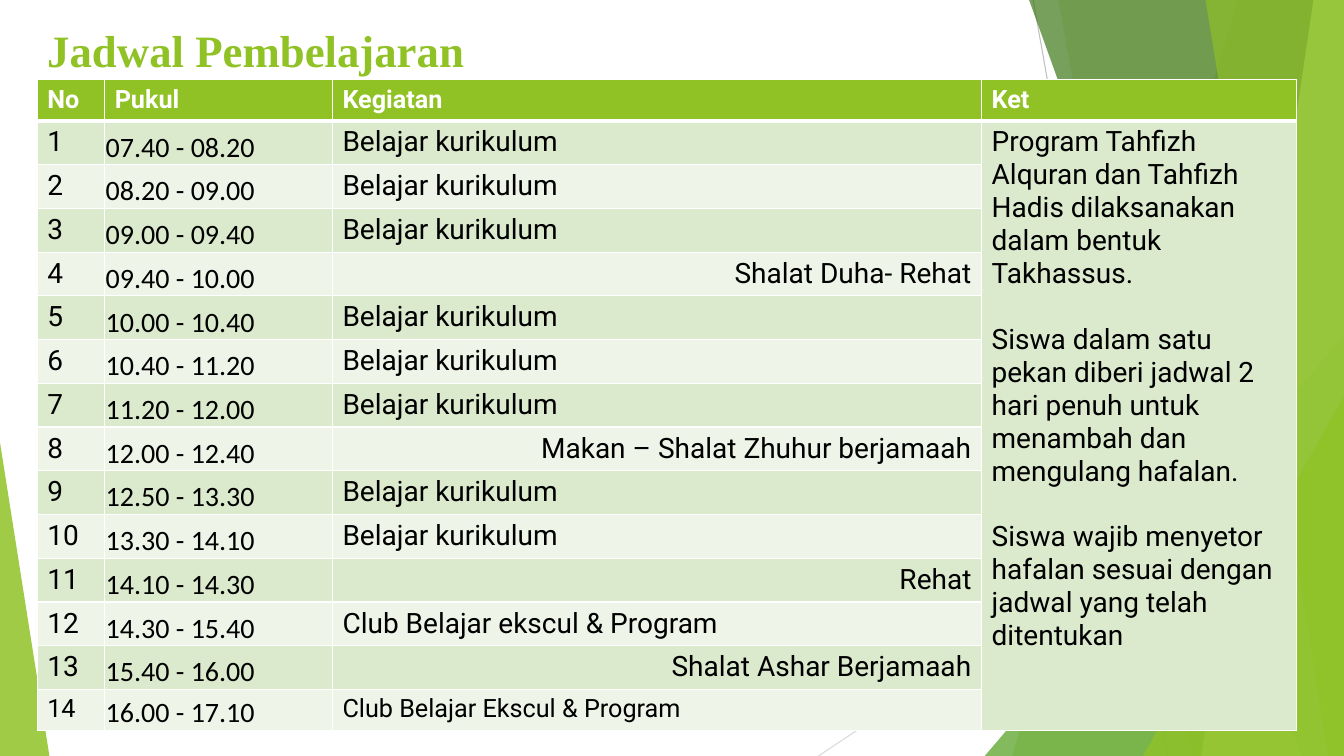
from lxml import etree
from pptx import Presentation, util as u
from pptx.dml.color import RGBColor
from pptx.enum import shapes, text
from pptx.oxml import ns

Pt = u.Pt
HEX = {"lime": "90C226", "green": "54A021", "dark": "3F7819", "pale": "C0E474",
       "gray": "BFBFBF", "mist": "D9D9D9", "odd": "DBE9CD", "even": "EEF4E8",
       "white": "FFFFFF", "black": "000000"}

# Content
TITLE = "Jadwal Pembelajaran"
HEAD = ["No", "Pukul", "Kegiatan", "Ket"]
STUDY = "Belajar kurikulum"
PLAN = [
    ("07.40 - 08.20", STUDY),
    ("08.20 - 09.00", STUDY),
    ("09.00 - 09.40", STUDY),
    ("09.40 - 10.00", "Shalat Duha- Rehat"),
    ("10.00 - 10.40", STUDY),
    ("10.40 - 11.20", STUDY),
    ("11.20 - 12.00", STUDY),
    ("12.00 - 12.40", "Makan – Shalat Zhuhur berjamaah"),
    ("12.50 - 13.30", STUDY),
    ("13.30 - 14.10", STUDY),
    ("14.10 - 14.30", "Rehat"),
    ("14.30 - 15.40", "Club Belajar ekscul & Program"),
    ("15.40 - 16.00", "Shalat Ashar Berjamaah"),
    ("16.00 - 17.10", "Club Belajar Ekscul & Program"),
]
BREAKS = {4, 8, 11, 13}
NOTES = [
    "Program Tahfizh Alquran dan Tahfizh Hadis dilaksanakan dalam bentuk Takhassus.",
    "Siswa dalam satu pekan diberi jadwal 2 hari penuh untuk menambah dan mengulang hafalan.",
    "Siswa wajib menyetor hafalan sesuai dengan jadwal yang telah ditentukan",
]

# Background: lines, then facets from back to front
WIDE, HIGH = 960, 540
LINES = [((738, 0), (834, HIGH), "gray"), ((WIDE, 290), (584.6, HIGH), "mist")]
# band: top x, bottom x, colour, opacity; peak: left, top, width, tip, colour, opacity
FACETS = [
    ("band", 884.2, 722.9, "lime", 30),
    ("band", 756, 851.8, "lime", 20),
    ("peak", 703.4, 239.8, 256.6, 1, "green", 72),
    ("band", 735.1, 929.5, "dark", 70),
    ("band", 938.2, 858.2, "pale", 70),
    ("band", 861.1, 949, "lime", 65),
    ("peak", 816.5, 283, 143.5, 1, "lime", 80),
    ("peak", 0, 316.1, 35.3, 0, "lime", 85),
]
COLS = [48.2, 162.7, 463.7, 224.9]
ROWS = [29.5] + [30.7] * 13 + [29.2]


def rgb(name):
    return RGBColor.from_string(HEX[name])


def put(obj, **vals):
    for key, val in vals.items():
        setattr(obj, key, val)


def paint(shape, tint, alpha):
    shape.shadow.inherit = False
    shape.line.fill.background()
    shape.fill.solid()
    shape.fill.fore_color.rgb = rgb(tint)
    clr = shape._element.spPr.find(".//" + ns.qn("a:srgbClr"))
    etree.SubElement(clr, ns.qn("a:alpha"), val=str(alpha * 1000))


def write(para, words, size, tint, font="Roboto", bold=False):
    run = para.add_run()
    run.text = words
    put(run.font, size=Pt(size), name=font, bold=bold)
    run.font.color.rgb = rgb(tint)


def edge(cell, row):
    """Draw white cell borders, heavier below the header."""
    props = cell._tc.get_or_add_tcPr()
    for side in "LRTB":
        thick = 3 if (row, side) in ((0, "B"), (1, "T")) else 1
        line = etree.SubElement(props, ns.qn("a:ln" + side), w=str(Pt(thick)))
        fill = etree.SubElement(line, ns.qn("a:solidFill"))
        etree.SubElement(fill, ns.qn("a:srgbClr"), val=HEX["white"])


deck = Presentation()
put(deck, slide_width=Pt(WIDE), slide_height=Pt(HIGH))
slide = deck.slides.add_slide(deck.slide_layouts[6])
art = slide.shapes

for start, end, tint in LINES:
    line = art.add_connector(shapes.MSO_CONNECTOR.STRAIGHT,
                             *[Pt(v) for v in start + end])
    line.line.width = Pt(0.75)
    line.line.color.rgb = rgb(tint)
    etree.SubElement(line._element.spPr, ns.qn("a:effectLst"))

for kind, *geo, tint, alpha in FACETS:
    if kind == "band":
        top, low = geo
        pen = art.build_freeform(Pt(top), 0)
        pen.add_line_segments([(Pt(x), Pt(y)) for x, y in
                               ((WIDE, 0), (WIDE, HIGH), (low, HIGH))])
        facet = pen.convert_to_shape()
    else:
        left, top, wide, tip = geo
        facet = art.add_shape(shapes.MSO_SHAPE.ISOSCELES_TRIANGLE, Pt(left),
                              Pt(top), Pt(wide), Pt(HIGH - top))
        facet.adjustments[0] = tip
    paint(facet, tint, alpha)

# Title
frame = art.add_textbox(Pt(26.6), Pt(9.4), Pt(854), Pt(33.8)).text_frame
put(frame, word_wrap=True, margin_top=Pt(6.7), margin_bottom=0,
    vertical_anchor=text.MSO_ANCHOR.TOP)
write(frame.paragraphs[0], TITLE, 32, "lime", "Times New Roman", True)

# Timetable
grid = art.add_table(len(ROWS), len(COLS), Pt(26.6), Pt(56.9),
                     Pt(sum(COLS)), Pt(sum(ROWS))).table
for col, wide in zip(grid.columns, COLS):
    col.width = Pt(wide)
for row, high in zip(grid.rows, ROWS):
    row.height = Pt(high)
grid.cell(1, 3).merge(grid.cell(len(PLAN), 3))

for r in range(len(ROWS)):
    for c in range(len(COLS)):
        cell = grid.cell(r, c)
        edge(cell, r)
        shade = "lime" if r == 0 else "odd" if r % 2 or c == 3 else "even"
        cell.fill.solid()
        cell.fill.fore_color.rgb = rgb(shade)
        para = cell.text_frame.paragraphs[0]
        if r == 0:
            write(para, HEAD[c], 18, "white", bold=True)
        elif c < 3:
            words = (str(r), *PLAN[r - 1])[c]
            size = 18 if r == len(PLAN) and c != 1 else 20
            write(para, words, size, "black", "Calibri" if c == 1 else "Roboto")
            if c == 1:
                put(cell, vertical_anchor=text.MSO_ANCHOR.BOTTOM, margin_left=Pt(0.75),
                    margin_right=Pt(0.75), margin_top=Pt(0.75), margin_bottom=0)
            elif c == 2 and r in BREAKS:
                para.alignment = text.PP_ALIGN.RIGHT

# Remarks in the merged cell
notes = grid.cell(1, 3).text_frame
for n, words in enumerate(NOTES):
    para = notes.add_paragraph() if n else notes.paragraphs[0]
    para.space_before = Pt(23.4 if n else 0)
    write(para, words, 20, "black")

deck.save("out.pptx")
